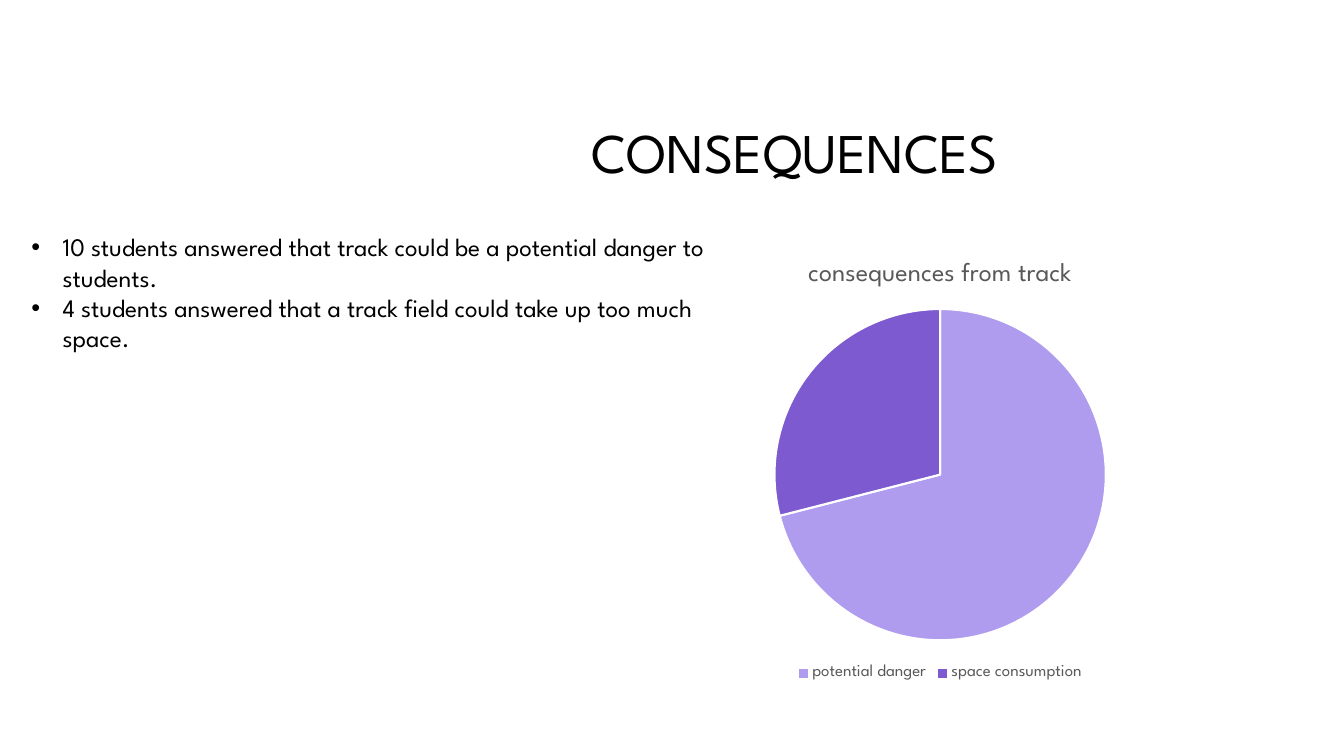
from lxml.etree import SubElement
from pptx import Presentation
from pptx.chart.data import CategoryChartData
from pptx.dml.color import RGBColor
from pptx.enum.chart import XL_CHART_TYPE, XL_LEGEND_POSITION
from pptx.enum.text import MSO_ANCHOR, PP_ALIGN
from pptx.oxml.ns import qn
from pptx.util import Inches, Pt

COLOURS = {
    "page": "FFFFFF",
    "ink": "000000",
    "label": "595959",
    "danger": "B09CEF",
    "space": "7D5AD0",
}


class SlideBuilder:
    """Holds the style and the current slide; places are percentages of its size."""

    font_name = "League Spartan"

    def __init__(self, deck):
        self.deck = deck
        self.page = deck.slides.add_slide(deck.slide_layouts[6])
        self.fill(self.page.background, "page")

    def colour(self, name):
        return RGBColor.from_string(COLOURS[name])

    def fill(self, target, name):
        target.fill.solid()
        target.fill.fore_color.rgb = self.colour(name)

    def place(self, left, top, width, height):
        across, down = self.deck.slide_width, self.deck.slide_height
        return [int(share * side / 100) for share, side in
                zip((left, top, width, height), (across, down, across, down))]

    def style(self, font, size, colour):
        font.name = self.font_name
        font.size = Pt(size)
        font.bold = False
        font.color.rgb = self.colour(colour)

    def add_span(self, para, text, size, colour="ink"):
        span = para.add_run()
        span.text = text
        self.style(span.font, size, colour)

    def add_box(self, place, anchor):
        frame = self.page.shapes.add_textbox(*self.place(*place)).text_frame
        frame.word_wrap = True
        frame.vertical_anchor = anchor
        return frame

    def add_title(self, text, place):
        para = self.add_box(place, MSO_ANCHOR.MIDDLE).paragraphs[0]
        para.alignment = PP_ALIGN.CENTER
        para.line_spacing = 0.9
        self.add_span(para, text, 40)

    def add_bullets(self, texts, place, indent=Inches(0.31)):
        frame = self.add_box(place, MSO_ANCHOR.TOP)
        for index, text in enumerate(texts):
            para = frame.add_paragraph() if index else frame.paragraphs[0]
            properties = para._p.get_or_add_pPr()
            properties.set("marL", str(indent))
            properties.set("indent", str(-indent))
            SubElement(properties, qn("a:buFont")).set("typeface", "Arial")
            SubElement(properties, qn("a:buChar")).set("char", "•")
            self.add_span(para, text, 18)

    def add_pie(self, title, slices, place):
        """Draw a pie from (category, value, colour name) slices."""
        data = CategoryChartData()
        data.categories = [category for category, _, _ in slices]
        data.add_series(title, [value for _, value, _ in slices])
        chart = self.page.shapes.add_chart(
            XL_CHART_TYPE.PIE, *self.place(*place), data).chart
        self.style(chart.font, 10, "ink")

        chart.has_title = True
        self.add_span(chart.chart_title.text_frame.paragraphs[0], title, 18.6, "label")
        chart.chart_title.include_in_layout = False

        chart.has_legend = True
        chart.legend.position = XL_LEGEND_POSITION.BOTTOM
        chart.legend.include_in_layout = False
        self.style(chart.legend.font, 12, "label")

        plot = chart.plots[0]
        plot.vary_by_categories = True
        for index, (_, _, colour) in enumerate(slices):
            wedge = plot.series[0].points[index].format
            self.fill(wedge, colour)
            wedge.line.color.rgb = self.colour("page")
            wedge.line.width = Pt(1.5)


def main():
    deck = Presentation()
    deck.slide_width, deck.slide_height = Inches(13.33), Inches(7.5)
    slide = SlideBuilder(deck)
    slide.add_title("CONSEQUENCES", (23.8, 11.2, 70.65, 18.8))
    slide.add_pie(
        "consequences from track",
        [("potential danger", 71, "danger"), ("space consumption", 29, "space")],
        (45.45, 31.75, 49, 58.9))
    slide.add_bullets(
        ["10 students answered that track could be a potential danger to students.",
         "4 students answered that a track field could take up too much space."],
        (1.6, 30, 52.05, 17.5))
    deck.save("out.pptx")


if __name__ == "__main__":
    main()
